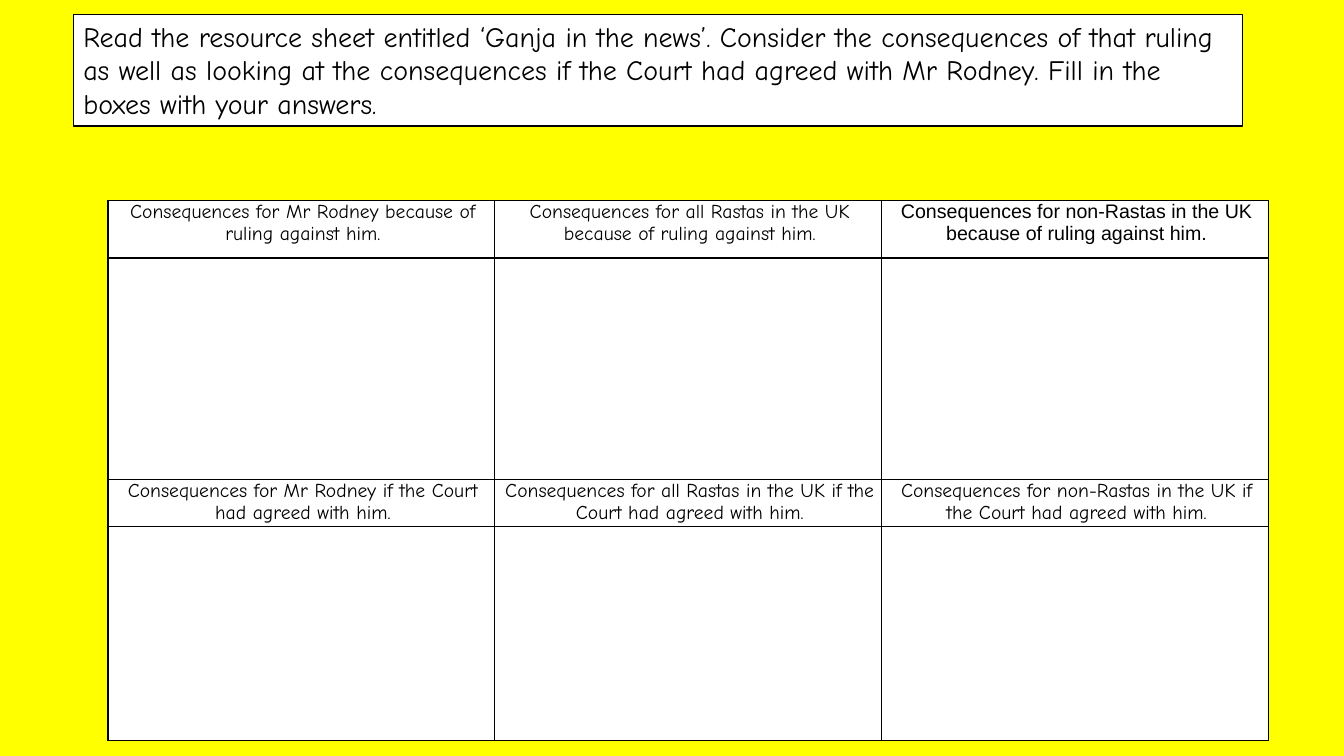
from lxml import etree
from pptx import Presentation
from pptx.dml.color import RGBColor
from pptx.enum import shapes, text
from pptx.oxml.ns import qn
from pptx.util import Cm, Pt

FONT = "Comic Neue"
TASK = ("Read the resource sheet entitled ‘Ganja in the news’. Consider the "
        "consequences of that ruling as well as looking at the consequences if "
        "the Court had agreed with Mr Rodney. Fill in the boxes with your answers.")
GROUPS = ["Mr Rodney", "all Rastas in the UK", "non-Rastas in the UK"]
CASES = ["because of ruling against him.", "if the Court had agreed with him."]
ROWS = [1.45, 5.59, 0.97, 5.38]  # each heading row is followed by an answer row
COL = 9.75


def paint(fill, color):
    fill.solid()
    fill.fore_color.rgb = RGBColor.from_string(color)


def style(para, size, font=FONT):
    para.font.size = Pt(size)
    para.font.name = font
    paint(para.font.fill, "000000")


def border(cell):
    """Put a thin black line on all four sides; call before filling the cell."""
    props = cell._tc.get_or_add_tcPr()
    for side in ("a:lnL", "a:lnR", "a:lnT", "a:lnB"):
        line = etree.SubElement(props, qn(side), w=str(Pt(1)))
        fill = etree.SubElement(line, qn("a:solidFill"))
        etree.SubElement(fill, qn("a:srgbClr"), val="000000")


def add_task(slide):
    box = slide.shapes.add_shape(shapes.MSO_SHAPE.RECTANGLE,
                                 Cm(1.85), Cm(0.36), Cm(29.46), Cm(2.82))
    box.shadow.inherit = False
    paint(box.fill, "FFFFFF")
    paint(box.line.fill, "000000")
    box.line.width = Pt(1)
    frame = box.text_frame
    frame.word_wrap = True
    frame.auto_size = text.MSO_AUTO_SIZE.SHAPE_TO_FIT_TEXT
    frame.vertical_anchor = text.MSO_ANCHOR.TOP
    para = frame.paragraphs[0]
    para.text = TASK
    para.alignment = text.PP_ALIGN.LEFT
    style(para, 20)


def add_head(cell, case, group):
    cell.margin_left = cell.margin_right = Cm(0.05)
    cell.margin_top = cell.margin_bottom = 0
    para = cell.text_frame.paragraphs[0]
    para.text = f"Consequences for {GROUPS[group]} {CASES[case]}"
    para.alignment = text.PP_ALIGN.CENTER
    para.space_before = Pt(6)
    para._p.get_or_add_pPr().set("marL", str(Cm(0.08)))
    odd = (case, group) == (0, 2)
    style(para, 14, "Arial" if odd else FONT)


def add_grid(slide):
    grid = slide.shapes.add_table(len(ROWS), len(GROUPS), Cm(2.72), Cm(5.05),
                                  Cm(COL * len(GROUPS)), Cm(sum(ROWS))).table
    grid.first_row = grid.horz_banding = False
    for col in grid.columns:
        col.width = Cm(COL)
    for r, high in enumerate(ROWS):
        grid.rows[r].height = Cm(high)
        for c in range(len(GROUPS)):
            cell = grid.cell(r, c)
            border(cell)
            paint(cell.fill, "FFFFFF")
            if r % 2 == 0:
                add_head(cell, r // 2, c)


def main():
    deck = Presentation()
    deck.slide_width, deck.slide_height = Cm(33.87), Cm(19.05)
    slide = deck.slides.add_slide(deck.slide_layouts[6])
    paint(slide.background.fill, "FFFF00")
    add_task(slide)
    add_grid(slide)
    deck.save("out.pptx")


if __name__ == "__main__":
    main()
